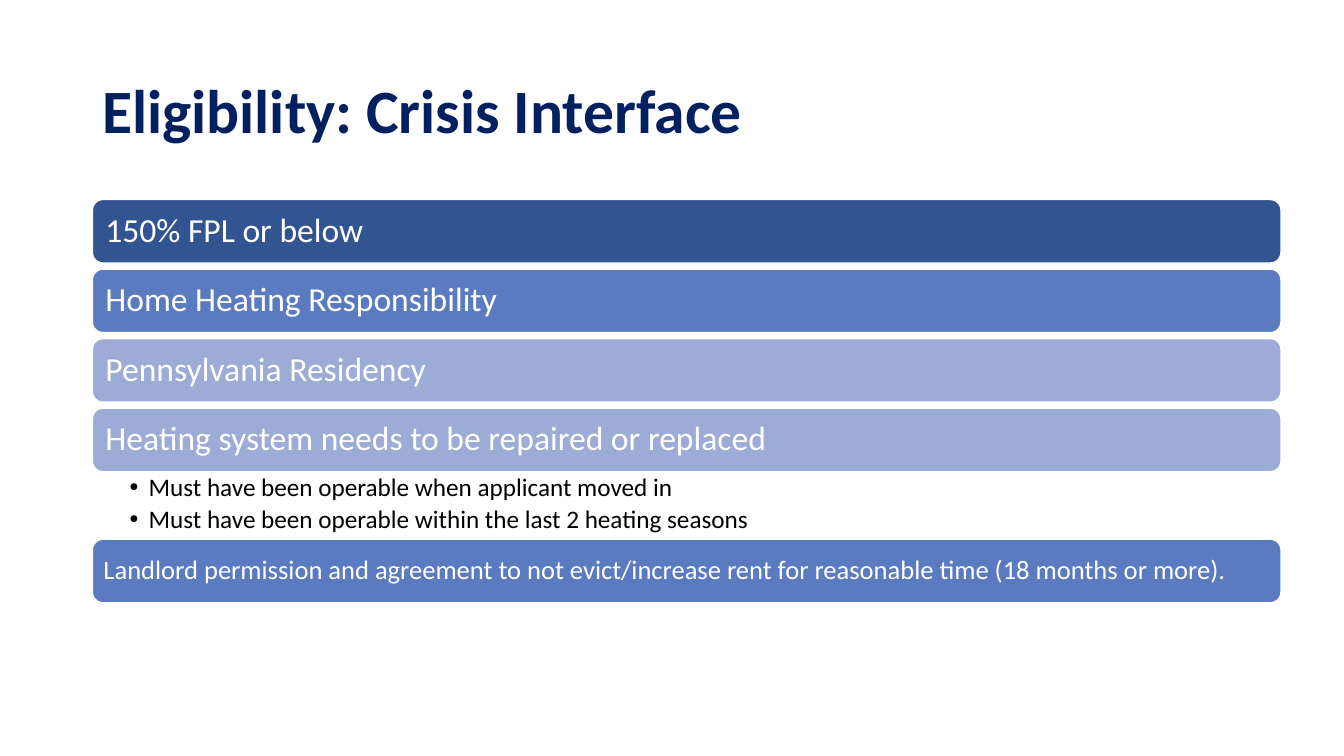
from lxml import etree
from pptx import Presentation
from pptx.dml.color import RGBColor
from pptx.enum.shapes import MSO_SHAPE as Shape
from pptx.enum.text import MSO_ANCHOR as Anchor, PP_ALIGN as Align
from pptx.oxml.ns import qn
from pptx.util import Pt

NAVY = RGBColor(0x00, 0x20, 0x60)
DARK_BLUE = RGBColor(0x32, 0x54, 0x91)
MID_BLUE = RGBColor(0x5B, 0x7B, 0xC0)
PALE_BLUE = RGBColor(0x9D, 0xAC, 0xD6)
WHITE = RGBColor(0xFF, 0xFF, 0xFF)
BLACK = RGBColor(0x00, 0x00, 0x00)

FONT = "Calibri"
LEFT, BAR_WIDTH, BAR_HEIGHT = 66, 849, 45.36
FIRST_TOP, BAR_STEP = 142.56, 49.68
LAST_TOP = 385.2

REQUIREMENTS = [
    ("150% FPL or below", DARK_BLUE),
    ("Home Heating Responsibility", MID_BLUE),
    ("Pennsylvania Residency", PALE_BLUE),
    ("Heating system needs to be repaired or replaced", PALE_BLUE),
]
HEATING_CONDITIONS = [
    "Must have been operable when applicant moved in",
    "Must have been operable within the last 2 heating seasons",
]
LANDLORD_TERMS = ("Landlord permission and agreement to not evict/increase rent "
                  "for reasonable time (18 months or more).")


def set_margins(frame, left, top, right, bottom):
    frame.margin_left, frame.margin_top = Pt(left), Pt(top)
    frame.margin_right, frame.margin_bottom = Pt(right), Pt(bottom)


def style_paragraph(para, text, size, color, bold=False):
    para.text = text
    para.alignment = Align.LEFT
    para.line_spacing = 0.9
    para.font.name = FONT
    para.font.size = Pt(size)
    para.font.bold = bold
    para.font.color.rgb = color


def add_bullet(para, indent):
    properties = para._p.get_or_add_pPr()
    properties.set("marL", str(Pt(indent)))
    properties.set("indent", str(-Pt(indent)))
    etree.SubElement(properties, qn("a:buFont")).set("typeface", "Arial")
    etree.SubElement(properties, qn("a:buChar")).set("char", "•")


def add_title(slide, text):
    box = slide.shapes.add_textbox(Pt(LEFT), Pt(28.8), Pt(828), Pt(104.4))
    frame = box.text_frame
    frame.word_wrap = True
    frame.vertical_anchor = Anchor.MIDDLE
    style_paragraph(frame.paragraphs[0], text, 44, NAVY, bold=True)


def add_bar(slide, top, text, fill, size=24, margin=7.2):
    bar = slide.shapes.add_shape(
        Shape.ROUNDED_RECTANGLE, Pt(LEFT), Pt(top), Pt(BAR_WIDTH), Pt(BAR_HEIGHT))
    bar.shadow.inherit = False
    bar.fill.solid()
    bar.fill.fore_color.rgb = fill
    bar.line.color.rgb = WHITE
    bar.line.width = Pt(1)
    frame = bar.text_frame
    frame.word_wrap = True
    frame.vertical_anchor = Anchor.MIDDLE
    set_margins(frame, margin, margin, margin, margin)
    style_paragraph(frame.paragraphs[0], text, size, WHITE)


def add_bullet_list(slide, top, height, items):
    box = slide.shapes.add_textbox(Pt(LEFT), Pt(top), Pt(BAR_WIDTH), Pt(height))
    frame = box.text_frame
    frame.word_wrap = True
    set_margins(frame, 26.64, 2.16, 10.08, 2.16)
    for index, item in enumerate(items):
        para = frame.add_paragraph() if index else frame.paragraphs[0]
        style_paragraph(para, item, 18, BLACK)
        para.level = 1
        para.space_after = Pt(3.6)
        add_bullet(para, 13.5)


def main():
    deck = Presentation()
    deck.slide_width, deck.slide_height = Pt(960), Pt(540)
    slide = deck.slides.add_slide(deck.slide_layouts[6])

    add_title(slide, "Eligibility: Crisis Interface")

    # Evenly stacked requirements
    for index, (text, fill) in enumerate(REQUIREMENTS):
        add_bar(slide, FIRST_TOP + index * BAR_STEP, text, fill)

    # Heating conditions fill the gap above the landlord bar
    list_top = FIRST_TOP + (len(REQUIREMENTS) - 1) * BAR_STEP + BAR_HEIGHT
    add_bullet_list(slide, list_top, LAST_TOP - list_top, HEATING_CONDITIONS)
    add_bar(slide, LAST_TOP, LANDLORD_TERMS, MID_BLUE, size=19, margin=5.7)

    deck.save("out.pptx")


if __name__ == "__main__":
    main()
